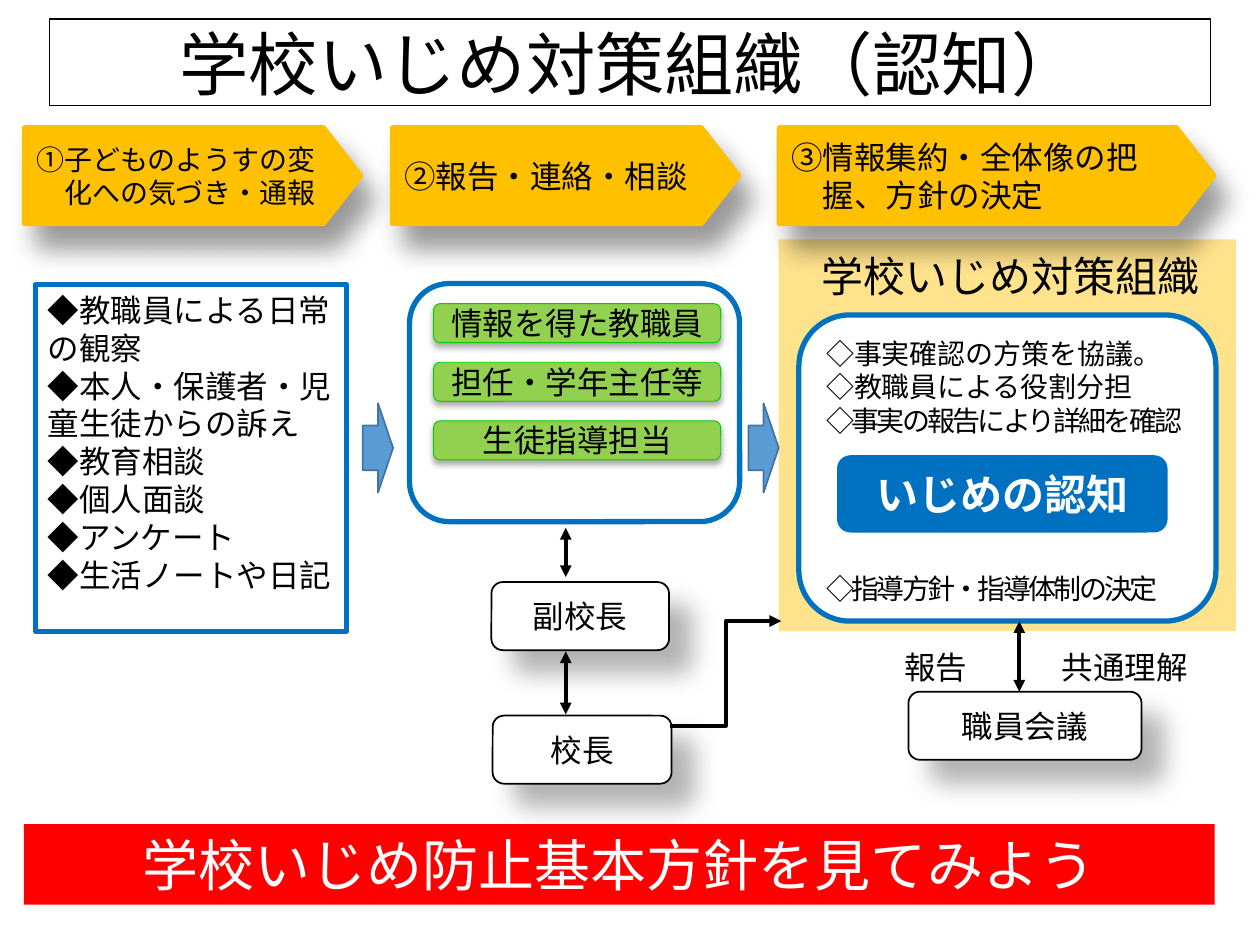
from dataclasses import dataclass
from typing import Optional

from lxml.etree import SubElement
from pptx import Presentation
from pptx.dml.color import RGBColor
from pptx.enum.shapes import MSO_CONNECTOR as Link, MSO_SHAPE as Form
from pptx.enum.text import MSO_ANCHOR as Anchor, PP_ALIGN as Align
from pptx.oxml.ns import qn
from pptx.util import Inches, Pt

FONT = "Noto Sans CJK JP"
LINE_PITCH = 1.2
COLUMNS, ROWS = 100, 75
BLACK, WHITE, BLUE, AMBER = "000000", "FFFFFF", "0070C0", "FFC000"

deck = Presentation()
deck.slide_width, deck.slide_height = Inches(10), Inches(7.5)
slide = deck.slides.add_slide(deck.slide_layouts[6])


@dataclass(frozen=True)
class Shadow:
    alpha: int
    blur: float
    distance: float
    angle: int


@dataclass(frozen=True)
class Look:
    form: Form
    fill: Optional[str] = None
    line: Optional[str] = None
    weight: float = 1
    shadow: Optional[Shadow] = None
    size: float = 18
    color: str = BLACK
    bold: bool = False
    align: Align = Align.CENTER
    anchor: Anchor = Anchor.MIDDLE


@dataclass(frozen=True)
class Area:
    col: float
    row: float
    cols: float
    rows: float


def across(cols: float) -> int:
    return round(deck.slide_width * cols / COLUMNS)


def down(rows: float) -> int:
    return round(deck.slide_height * rows / ROWS)


def rgb(value: str) -> RGBColor:
    return RGBColor.from_string(value)


def cast_shadow(shape, shadow: Shadow) -> None:
    effects = shape._element.spPr.find(qn("a:effectLst"))
    outer = SubElement(effects, qn("a:outerShdw"), blurRad=str(Pt(shadow.blur)),
                       dist=str(Pt(shadow.distance)), dir=str(shadow.angle * 60000),
                       algn="ctr", rotWithShape="0")
    color = SubElement(outer, qn("a:srgbClr"), val=BLACK)
    SubElement(color, qn("a:alpha"), val=str(shadow.alpha * 1000))


def write(shape, text: str, look: Look) -> None:
    frame = shape.text_frame
    frame.word_wrap = True
    frame.vertical_anchor = look.anchor
    frame.text = text
    for paragraph in frame.paragraphs:
        paragraph.alignment = look.align
        paragraph.line_spacing = Pt(round(look.size * LINE_PITCH, 1))
        for run in paragraph.runs:
            run.font.size, run.font.bold = Pt(look.size), look.bold
            run.font.name = FONT
            run.font.color.rgb = rgb(look.color)
            SubElement(run.font._element, qn("a:ea"), typeface=FONT)


def draw(area: Area, look: Look, text: str = ""):
    shape = slide.shapes.add_shape(look.form, across(area.col), down(area.row),
                                   across(area.cols), down(area.rows))
    shape.shadow.inherit = False
    if look.fill:
        shape.fill.solid()
        shape.fill.fore_color.rgb = rgb(look.fill)
    else:
        shape.fill.background()
    if look.line:
        shape.line.color.rgb = rgb(look.line)
        shape.line.width = Pt(look.weight)
    else:
        shape.line.fill.background()
    if look.shadow:
        cast_shadow(shape, look.shadow)
    if text:
        write(shape, text, look)
    return shape


def label(area: Area, text: str, size: float):
    box = slide.shapes.add_textbox(across(area.col), down(area.row),
                                   across(area.cols), down(area.rows))
    write(box, text, Look(Form.RECTANGLE, size=size, align=Align.LEFT, anchor=Anchor.TOP))
    return box


def arrow(kind: Link, start: tuple[float, float], end: tuple[float, float],
          both_ends: bool = True) -> None:
    link = slide.shapes.add_connector(kind, across(start[0]), down(start[1]),
                                      across(end[0]), down(end[1]))
    link.line.color.rgb = rgb(BLACK)
    link.line.width = Pt(2.25)
    stroke = link.line._get_or_add_ln()
    for tag in ("a:headEnd", "a:tailEnd") if both_ends else ("a:tailEnd",):
        SubElement(stroke, qn(tag), type="triangle")
    SubElement(link._element.spPr, qn("a:effectLst"))


# Tinted panel behind the third step
panel = draw(Area(61.8, 19, 36.3, 31.1), Look(Form.RECTANGLE, AMBER))
tint = panel._element.spPr.find(qn("a:solidFill")).find(qn("a:srgbClr"))
SubElement(tint, qn("a:alpha"), val="45000")

# Title and closing banner
draw(Area(3.9, 1.5, 92.2, 6.9), Look(Form.RECTANGLE, line=BLACK, weight=0.75, size=39.6),
     "学校いじめ対策組織（認知）")
draw(Area(1.9, 65.4, 94.5, 6.4), Look(Form.RECTANGLE, "FF0000", size=32, color=WHITE),
     "学校いじめ防止基本方針を見てみよう")

# Three step headings, continued lines indented by one character
for col, cols, size, heading in (
    (1.9, 26.8, 16, "➀子どものようすの変\n化への気づき・通報"),
    (31.1, 27.6, 18, "②報告・連絡・相談"),
    (61.8, 34.6, 18, "③情報集約・全体像の把\n握、方針の決定"),
):
    step = draw(Area(col, 10.1, cols, 7.7),
                Look(Form.PENTAGON, AMBER, AMBER, 2.25, Shadow(40, 15, 15, 60), size,
                     align=Align.LEFT), heading)
    step.adjustments[0] = 0.39
    for continued in step.text_frame.paragraphs[1:]:
        continued._p.get_or_add_pPr().set("marL", str(Pt(size)))

# Contents of the steps
draw(Area(2.8, 22.6, 24.7, 27.5),
     Look(Form.RECTANGLE, WHITE, BLUE, 3, align=Align.LEFT, anchor=Anchor.TOP),
     "◆教職員による日常の観察\n◆本人・保護者・児童生徒からの訴え\n◆教育相談\n"
     "◆個人面談\n◆アンケート\n◆生活ノートや日記")
draw(Area(32.5, 22.5, 26.2, 18.9), Look(Form.ROUNDED_RECTANGLE, WHITE, BLUE, 3))
council = draw(Area(63.4, 25, 33.1, 24.3),
               Look(Form.ROUNDED_RECTANGLE, WHITE, BLUE, 3, size=16,
                    align=Align.LEFT, anchor=Anchor.TOP),
               "◇事実確認の方策を協議。\n◇教職員による役割分担\n"
               "◇事実の報告により詳細を確認\n◇指導方針・指導体制の決定")
tasks = council.text_frame.paragraphs
tasks[3].space_before = Pt(4 * 16 * LINE_PITCH)  # room for the recognition box
for task in tasks[2:]:
    task.runs[0].font._element.set("spc", "-150")
draw(Area(66.5, 36.2, 26.1, 6),
     Look(Form.ROUNDED_RECTANGLE, BLUE, BLUE, size=24, color=WHITE, bold=True),
     "いじめの認知")

# Block arrows between steps
for col in (28.8, 59.4):
    draw(Area(col, 32, 2.4, 7.1), Look(Form.RIGHT_ARROW, "5B9BD5", "43739E"))

# Staff who share the report
staff = Look(Form.ROUNDED_RECTANGLE, "92D050", "00CC00", 0.5, Shadow(32, 3.5, 2.2, 90))
for index, member in enumerate(("情報を得た教職員", "担任・学年主任等", "生徒指導担当")):
    draw(Area(34.4, 24.1 + 4.65 * index, 22.8, 3.1), staff, member)

# Reporting line
for start, end in (((44.9, 41.9), (44.9, 45.8)), ((44.9, 51.7), (44.9, 56.7)),
                   ((80.9, 49.3), (80.9, 54.9))):
    arrow(Link.STRAIGHT, start, end)
office = Look(Form.ROUNDED_RECTANGLE, WHITE, BLACK, shadow=Shadow(30, 15, 18, 45))
for area, role in (
    (Area(72.1, 54.9, 18.5, 5.4), "職員会議"),
    (Area(39, 46.2, 14.1, 5.4), "副校長"),
    (Area(39.1, 56.8, 14.2, 5.4), "校長"),
):
    draw(area, office, role)
arrow(Link.ELBOW, (53.2, 57.6), (62, 49.3), both_ends=False)

# Captions
label(Area(64.2, 19.4, 33.1, 5), "学校いじめ対策組織", 24)
exchange = label(Area(70.8, 50.9, 28, 4), "報告\t共通理解", 18)
stops = SubElement(exchange.text_frame.paragraphs[0]._p.get_or_add_pPr(), qn("a:tabLst"))
SubElement(stops, qn("a:tab"), pos=str(across(12.5)), algn="l")

deck.save("out.pptx")
